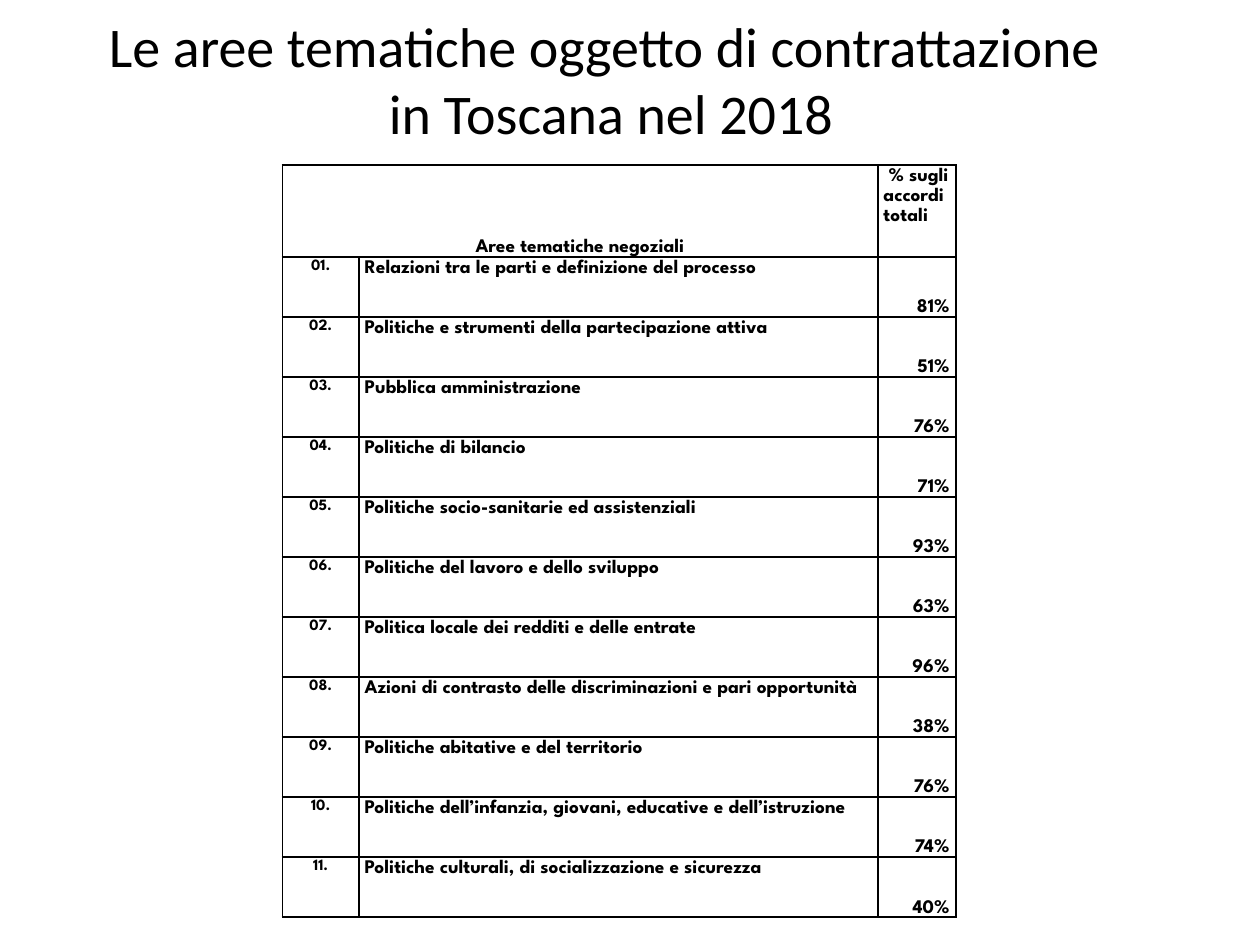
from lxml import etree
from pptx import Presentation
from pptx import util as u
from pptx.dml import color
from pptx.enum import text
from pptx.oxml import ns

INK = "000000"
TITLE = "Le aree tematiche oggetto di contrattazione \vin Toscana nel 2018"
AREAS = [
    ("Relazioni tra le parti e definizione del processo", 81),
    ("Politiche e strumenti della partecipazione attiva", 51),
    ("Pubblica amministrazione", 76),
    ("Politiche di bilancio", 71),
    ("Politiche socio-sanitarie ed assistenziali", 93),
    ("Politiche del lavoro e dello sviluppo", 63),
    ("Politica locale dei redditi e delle entrate", 96),
    ("Azioni di contrasto delle discriminazioni e pari opportunità", 38),
    ("Politiche abitative e del territorio", 76),
    ("Politiche dell’infanzia, giovani, educative e dell’istruzione", 74),
    ("Politiche culturali, di socializzazione e sicurezza", 40),
]
COLUMN_WIDTHS = [1.55, 10.46, 1.57]
HEADER_HEIGHT, ROW_HEIGHT = 1.85, 1.21
LEFT, CENTER, RIGHT = text.PP_ALIGN.LEFT, text.PP_ALIGN.CENTER, text.PP_ALIGN.RIGHT
TOP, BOTTOM = text.MSO_ANCHOR.TOP, text.MSO_ANCHOR.BOTTOM


def rgb(value):
    """Turn a hex string into a colour."""
    return color.RGBColor.from_string(value)


def style(para, face, size, align, bold=False):
    """Set the font and alignment of a paragraph."""
    para.alignment = align
    para.font.name = face
    para.font.size = u.Pt(size)
    para.font.bold = bold
    para.font.color.rgb = rgb(INK)


def add_title(page):
    """Add the two-line centred title."""
    box = page.shapes.add_textbox(u.Cm(0.89), u.Cm(0), u.Cm(22.86), u.Cm(3.18))
    frame = box.text_frame
    frame.word_wrap = True
    frame.vertical_anchor = text.MSO_ANCHOR.MIDDLE
    para = frame.paragraphs[0]
    para.text = TITLE
    style(para, "Calibri", 32, CENTER)


def add_borders(cell):
    """Draw a thin line on all four sides of a cell."""
    properties = cell._tc.get_or_add_tcPr()
    for side in ("a:lnL", "a:lnR", "a:lnT", "a:lnB"):
        line = etree.SubElement(properties, ns.qn(side), w=str(u.Pt(1)))
        fill = etree.SubElement(line, ns.qn("a:solidFill"))
        etree.SubElement(fill, ns.qn("a:srgbClr"), val=INK)


def fill_cell(cell, words, align=LEFT, anchor=TOP, size=11, inset=0.11):
    """Write one cell in the bold table face."""
    cell.margin_left = cell.margin_right = u.Cm(inset)
    cell.margin_top = cell.margin_bottom = u.Cm(0)
    cell.vertical_anchor = anchor
    para = cell.text_frame.paragraphs[0]
    para.text = words
    para.line_spacing = 1.15
    style(para, "League Spartan", size, align, bold=True)


def add_area_table(page):
    """Add the table of areas and their share of agreements."""
    heights = [HEADER_HEIGHT] + [ROW_HEIGHT] * len(AREAS)
    table = page.shapes.add_table(
        len(heights), len(COLUMN_WIDTHS), u.Cm(5.69), u.Cm(3.33),
        u.Cm(sum(COLUMN_WIDTHS)), u.Cm(sum(heights))).table
    table.first_row = table.horz_banding = False
    for column, width in zip(table.columns, COLUMN_WIDTHS):
        column.width = u.Cm(width)
    for row, height in zip(table.rows, heights):
        row.height = u.Cm(height)
    for cell in table.iter_cells():
        add_borders(cell)
        cell.fill.background()

    table.cell(0, 0).merge(table.cell(0, 1))
    fill_cell(table.cell(0, 0), "Aree tematiche negoziali", CENTER, BOTTOM)
    fill_cell(table.cell(0, 2), " % sugli accordi totali")
    for number, (area, share) in enumerate(AREAS, 1):
        fill_cell(table.cell(number, 0), f"{number:02}.", CENTER, size=9)
        fill_cell(table.cell(number, 1), area)
        fill_cell(table.cell(number, 2), f"{share}%", RIGHT, BOTTOM, inset=0.13)


def main():
    """Build and save the slide."""
    deck = Presentation()
    deck.slide_width, deck.slide_height = u.Cm(25.4), u.Cm(19.05)
    page = deck.slides.add_slide(deck.slide_layouts[6])
    add_title(page)
    add_area_table(page)
    deck.save("out.pptx")


if __name__ == "__main__":
    main()
